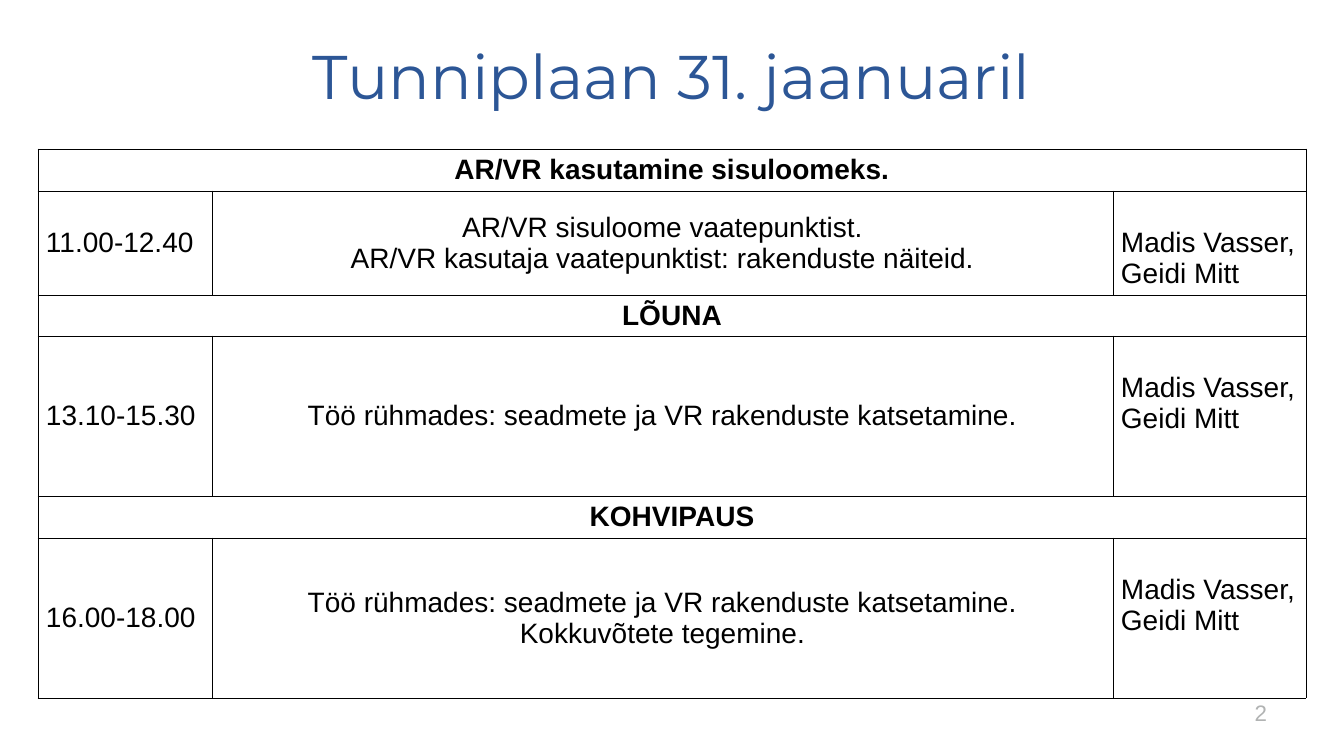
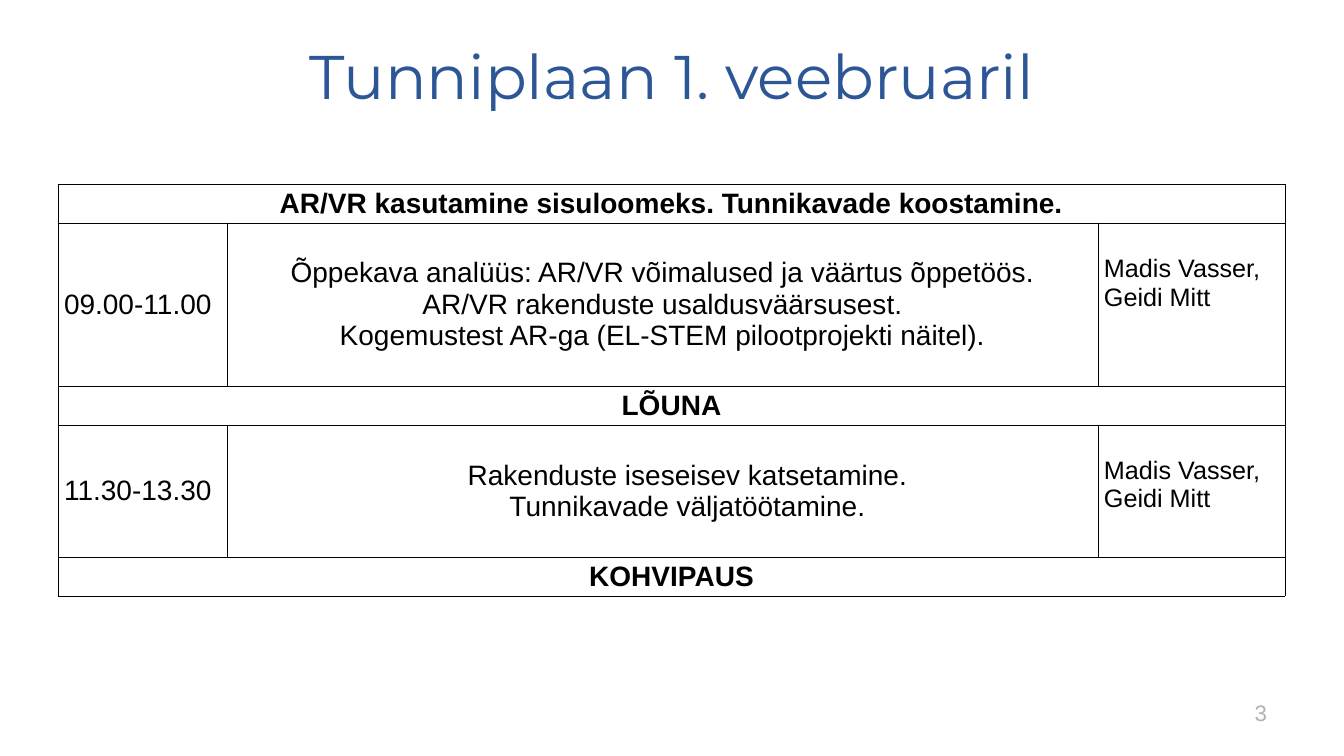
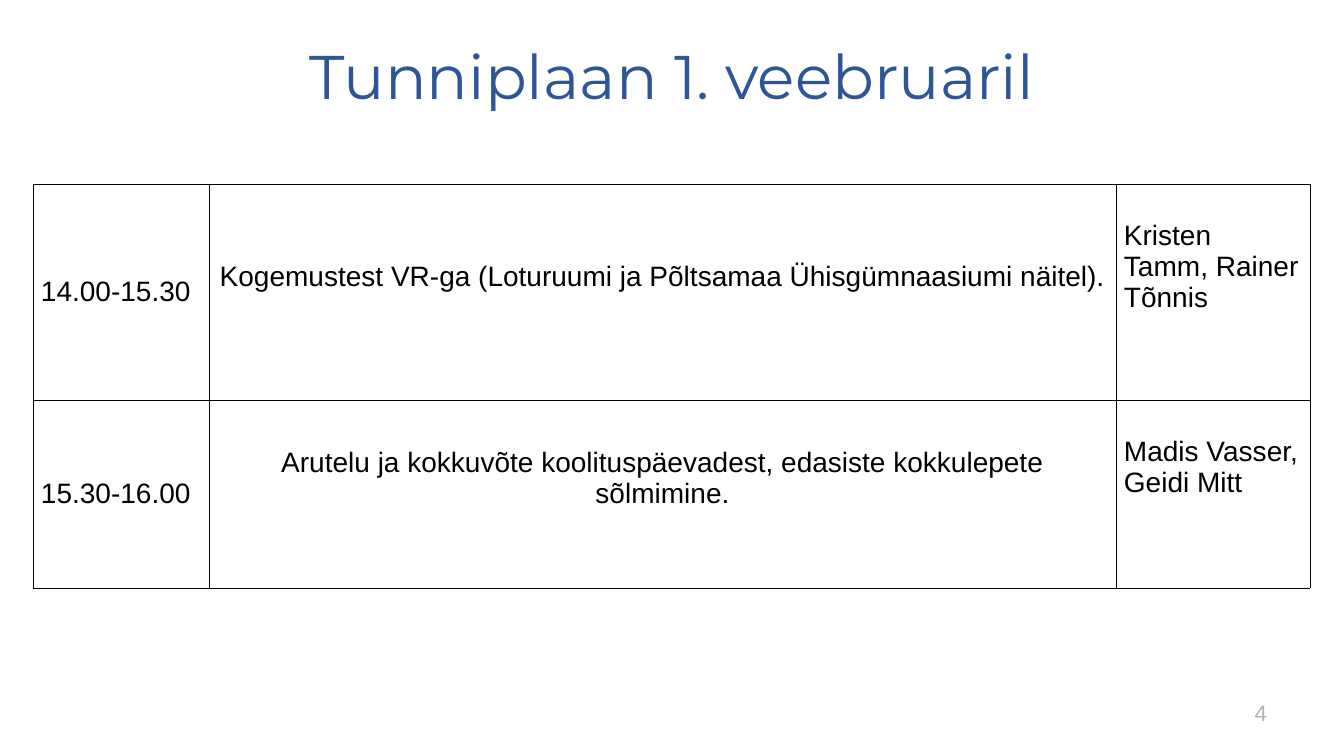
from lxml.etree import SubElement
from pptx import Presentation
from pptx.dml.color import RGBColor
from pptx.enum.text import MSO_ANCHOR as Anchor, PP_ALIGN as Align
from pptx.oxml.ns import qn
from pptx.util import Emu, Pt

PX = 9072
COLORS = {"title": "2C5696", "number": "B1B3B3", "text": "000000", "border": "000000"}
TITLE_BOX = (67, 42, 1210, 76)
NUMBER_BOX = (1126, 693, 151, 40)
BODY_SIZE = 20
TRAINERS = "Madis Vasser, Geidi Mitt"
GROUP_WORK = "Töö rühmades: seadmete ja VR rakenduste katsetamine."

SCHEDULES = [
    {
        "number": 2,
        "title": "Tunniplaan 31. jaanuaril",
        "origin": (38, 149),
        "columns": (174, 901, 193),
        "inset": (8, 3),
        "trainer_size": 20,
        "rows": [
            (42, "AR/VR kasutamine sisuloomeks."),
            (104, "11.00-12.40", ["AR/VR sisuloome vaatepunktist.",
                                  "AR/VR kasutaja vaatepunktist: rakenduste näiteid."], TRAINERS),
            (41, "LÕUNA"),
            (160, "13.10-15.30", [GROUP_WORK], TRAINERS),
            (42, "KOHVIPAUS"),
            (160, "16.00-18.00", [GROUP_WORK, "Kokkuvõtete tegemine."], TRAINERS),
        ],
    },
    {
        "number": 3,
        "title": "Tunniplaan 1. veebruaril",
        "origin": (58, 184),
        "columns": (169, 871, 187),
        "inset": (6, 2),
        "trainer_size": 18,
        "indents": {3: 50},
        "rows": [
            (39, "AR/VR kasutamine sisuloomeks. Tunnikavade koostamine."),
            (163, "09.00-11.00", ["Õppekava analüüs: AR/VR võimalused ja väärtus õppetöös.",
                                  "AR/VR rakenduste usaldusväärsusest.",
                                  "Kogemustest AR-ga (EL-STEM pilootprojekti näitel)."], TRAINERS),
            (39, "LÕUNA"),
            (132, "11.30-13.30", ["Rakenduste iseseisev katsetamine.",
                                  "Tunnikavade väljatöötamine."], TRAINERS),
            (39, "KOHVIPAUS"),
        ],
    },
    {
        "number": 4,
        "title": "Tunniplaan 1. veebruaril",
        "origin": (33, 184),
        "columns": (176, 907, 194),
        "inset": (8, 3),
        "trainer_size": 20,
        "topic_lift": 31,
        "rows": [
            (216, "14.00-15.30",
             ["Kogemustest VR-ga (Loturuumi ja Põltsamaa Ühisgümnaasiumi näitel)."],
             "Kristen Tamm, Rainer Tõnnis"),
            (188, "15.30-16.00",
             ["Arutelu ja kokkuvõte koolituspäevadest, edasiste kokkulepete sõlmimine."], TRAINERS),
        ],
    },
]


def px(value):
    return Emu(round(value * PX))


def write(frame, lines, size, color, align, font="Arial", bold=False):
    frame.text = "\n".join(lines)
    frame.word_wrap = True
    for para in frame.paragraphs:
        para.alignment = align
        for span in para.runs:
            span.font.name = font
            span.font.size = Pt(size)
            span.font.bold = bold
            span.font.color.rgb = RGBColor.from_string(COLORS[color])


def add_text(page, place, text, size, color, align, font="Arial"):
    frame = page.shapes.add_textbox(*map(px, place)).text_frame
    write(frame, [text], size, color, align, font)
    frame.vertical_anchor = Anchor.MIDDLE
    return frame


def add_borders(cell):
    props = cell._tc.get_or_add_tcPr()
    for index, side in enumerate(("lnL", "lnR", "lnT", "lnB")):
        line = SubElement(props, qn(f"a:{side}"), w=str(Pt(0.5)))
        props.insert(index, line)
        fill = SubElement(line, qn("a:solidFill"))
        SubElement(fill, qn("a:srgbClr"), val=COLORS["border"])


def fill_cell(cell, lines, inset, align=Align.LEFT, size=BODY_SIZE, bold=False,
              anchor=Anchor.MIDDLE, indent=0, drop=0, lift=0):
    side, edge = inset
    write(cell.text_frame, lines, size, "text", align, bold=bold)
    cell.vertical_anchor = anchor
    cell.margin_left, cell.margin_right = px(side + indent), px(side)
    cell.margin_top, cell.margin_bottom = px(edge + drop), px(edge + lift)


def add_schedule(page, schedule):
    rows, columns, inset = schedule["rows"], schedule["columns"], schedule["inset"]
    size = schedule["trainer_size"]
    trainer_drop = round(size * 1.65)
    place = (*schedule["origin"], sum(columns), sum(row[0] for row in rows))
    table = page.shapes.add_table(len(rows), len(columns), *map(px, place)).table
    table.first_row = table.horz_banding = False
    for column, width in zip(table.columns, columns):
        column.width = px(width)
    for index, (height, label, *details) in enumerate(rows):
        table.rows[index].height = px(height)
        first, middle, last = table.rows[index].cells
        for cell in (first, middle, last):
            cell.fill.background()
            add_borders(cell)
        if details:
            topics, trainers = details
            fill_cell(first, [label], inset)
            fill_cell(middle, topics, inset, Align.CENTER,
                      indent=schedule.get("indents", {}).get(index, 0),
                      lift=schedule.get("topic_lift", 0))
            fill_cell(last, [trainers], inset, size=size, anchor=Anchor.TOP,
                      drop=trainer_drop, lift=-inset[1])
        else:
            first.merge(last)
            fill_cell(first, [label], inset, Align.CENTER, bold=True)


def main():
    deck = Presentation()
    deck.slide_width, deck.slide_height = px(1344), px(756)
    for schedule in SCHEDULES:
        page = deck.slides.add_slide(deck.slide_layouts[6])
        title = add_text(page, TITLE_BOX, schedule["title"], 44, "title", Align.CENTER, "Montserrat")
        title.paragraphs[0].line_spacing = 0.9
        add_text(page, NUMBER_BOX, str(schedule["number"]), 16, "number", Align.RIGHT)
        add_schedule(page, schedule)
    deck.save("out.pptx")


if __name__ == "__main__":
    main()
